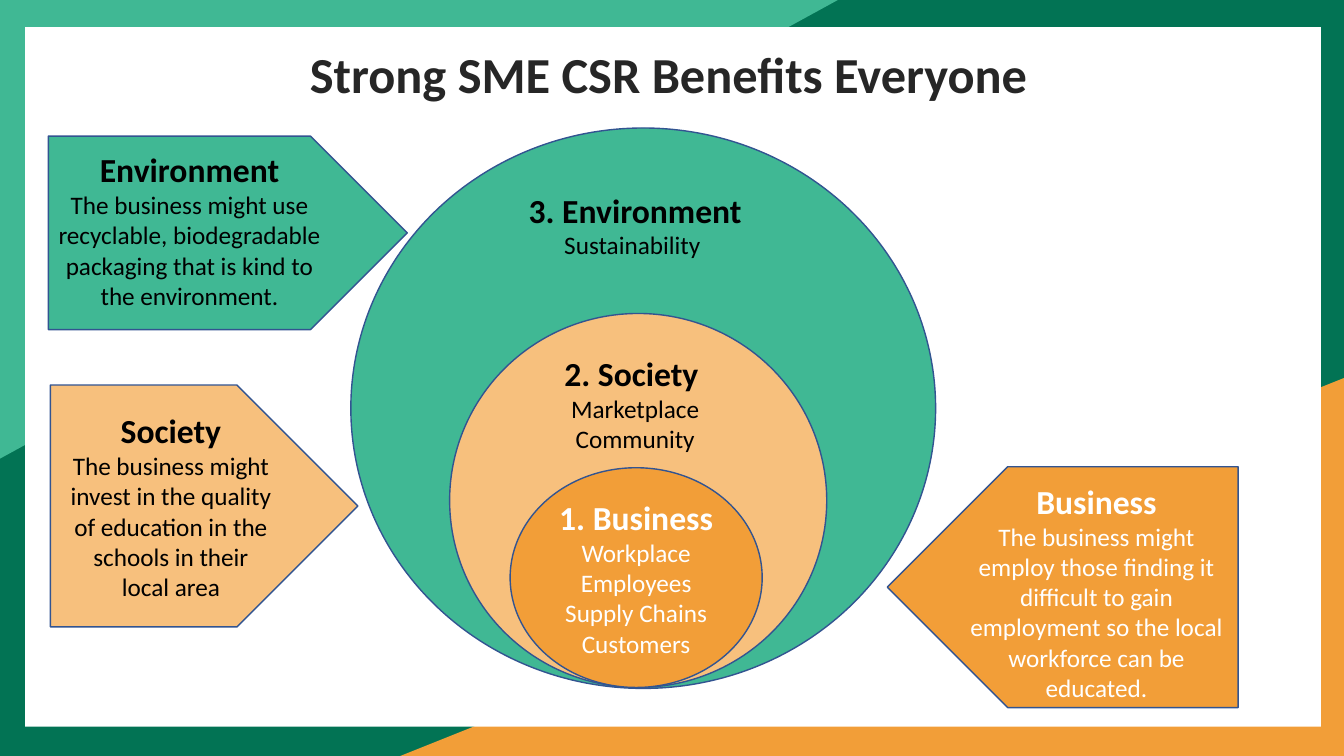
from pptx import Presentation
from pptx.dml.color import RGBColor
from pptx.enum.shapes import MSO_SHAPE
from pptx.enum.text import MSO_ANCHOR, PP_ALIGN
from pptx.util import Inches, Pt

WIDTH, HEIGHT = 13.33, 7.5
FONT = "Calibri"
DARK_GREEN, GREEN = "027354", "40B894"
ORANGE, PEACH = "F29E38", "F7C07D"
OUTLINE, WHITE, BLACK, CHARCOAL = "325491", "FFFFFF", "000000", "262626"

# Circle box, fill, text box (None: text sits in the circle), text colour, lines
RINGS = [
    ((3.48, 1.27, 5.8, 5.56), GREEN, (5.05, 1.83, 2.5, 0.81), BLACK,
     ["3. Environment", "Sustainability "]),
    ((4.46, 3.11, 3.74, 3.71), PEACH, (5.25, 3.45, 2.1, 1.11), BLACK,
     ["2. Society ", "Marketplace", "Community"]),
    ((5.06, 4.64, 2.5, 2.18), ORANGE, None, WHITE,
     ["1. Business", "Workplace", "Employees", "Supply Chains", "Customers"]),
]

# Arrow box, rotation, fill, text box, text colour, lines
EXAMPLES = [
    ((8.8, 4.63, 3.48, 2.39), 180, ORANGE, (9.44, 4.72, 2.87, 2.32), WHITE,
     ["Business", "The business might employ those finding it difficult to gain "
      "employment so the local workforce can be educated."]),
    ((0.48, 1.35, 3.56, 1.92), 0, GREEN, (0.38, 1.43, 3, 1.72), BLACK,
     ["Environment", "The business might use recyclable, biodegradable "
      "packaging that is kind to the environment."]),
    ((0.5, 3.82, 3.05, 2.4), 0, PEACH, (0.57, 4.02, 2.25, 2.02), BLACK,
     ["Society", "The business might invest in the quality of education in "
      "the schools in their local area"]),
]


def color(hex_code):
    return RGBColor.from_string(hex_code)


def add_filled(slide, kind, box, fill, outline=None, rotation=0):
    shape = slide.shapes.add_shape(kind, *map(Inches, box))
    shape.shadow.inherit = False
    shape.rotation = rotation
    shape.fill.solid()
    shape.fill.fore_color.rgb = color(fill)
    if outline:
        shape.line.color.rgb = color(outline)
        shape.line.width = Pt(1)
    else:
        shape.line.fill.background()
    return shape


def write_lines(frame, lines, text_color, heading_size=24):
    """Fill the frame with a bold heading followed by regular lines."""
    frame.word_wrap = True
    frame.text = "\n".join(lines)
    for index, paragraph in enumerate(frame.paragraphs):
        paragraph.alignment = PP_ALIGN.CENTER
        font = paragraph.runs[0].font
        font.name = FONT
        font.size = Pt(18 if index else heading_size)
        font.bold = index == 0
        font.color.rgb = color(text_color)


def add_text(slide, box, lines, text_color, heading_size=24):
    frame = slide.shapes.add_textbox(*map(Inches, box)).text_frame
    write_lines(frame, lines, text_color, heading_size)
    return frame


def add_frame(slide, width, height):
    """Coloured border with corner triangles around a white panel."""
    add_filled(slide, MSO_SHAPE.RECTANGLE, (0, 0, width, height), DARK_GREEN)
    corners = [
        ((width - 9.36, height - 3.75, 9.36, 3.75), ORANGE, 0),
        ((0, 0, 8.31, 4.55), GREEN, 180),
    ]
    for box, fill, rotation in corners:
        corner = add_filled(slide, MSO_SHAPE.ISOSCELES_TRIANGLE, box, fill,
                            rotation=rotation)
        corner.adjustments[0] = 1
    add_filled(slide, MSO_SHAPE.RECTANGLE,
               (0.25, 0.27, width - 0.48, height - 0.56), WHITE)


def add_title(slide, box):
    frame = add_text(slide, box, ["Strong SME CSR Benefits Everyone "],
                     CHARCOAL, 36)
    frame.paragraphs[0].line_spacing = 0.9


def add_example(slide, box, rotation, fill, text_box, text_color, lines):
    add_filled(slide, MSO_SHAPE.PENTAGON, box, fill, OUTLINE, rotation)
    add_text(slide, text_box, lines, text_color)


def add_ring(slide, box, fill, text_box, text_color, lines):
    ring = add_filled(slide, MSO_SHAPE.FLOWCHART_CONNECTOR, box, fill, OUTLINE)
    if text_box:
        add_text(slide, text_box, lines, text_color)
    else:
        ring.text_frame.vertical_anchor = MSO_ANCHOR.MIDDLE
        write_lines(ring.text_frame, lines, text_color)


def main():
    presentation = Presentation()
    presentation.slide_width = Inches(WIDTH)
    presentation.slide_height = Inches(HEIGHT)
    slide = presentation.slides.add_slide(presentation.slide_layouts[6])
    add_frame(slide, WIDTH, HEIGHT)
    add_title(slide, (0.95, 0.45, 11.48, 0.92))
    for example in EXAMPLES:
        add_example(slide, *example)
    for ring in RINGS:
        add_ring(slide, *ring)
    presentation.save("out.pptx")


if __name__ == "__main__":
    main()
